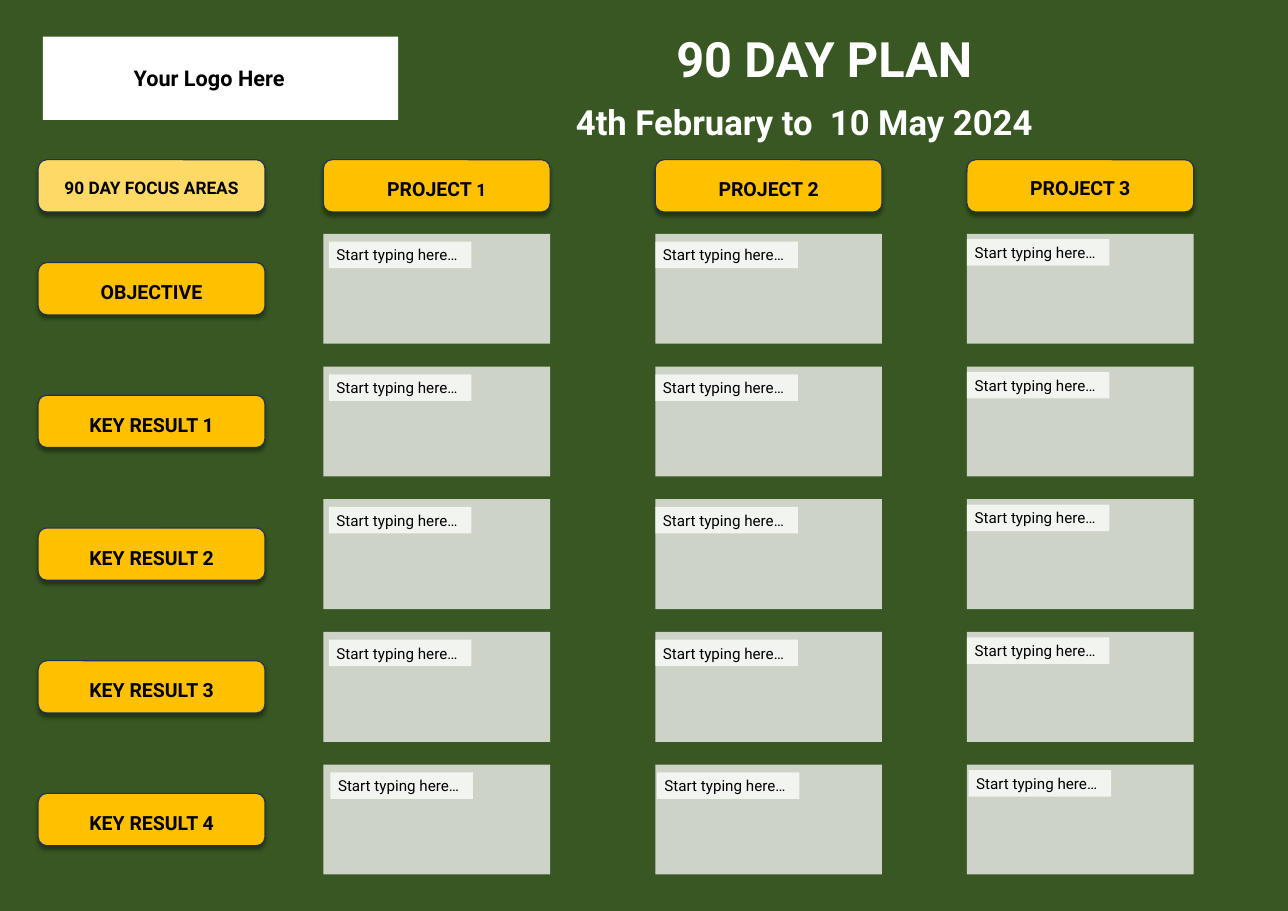
from lxml import etree
from pptx import Presentation
from pptx.dml.color import RGBColor
from pptx.enum.shapes import MSO_SHAPE as Preset
from pptx.enum.text import MSO_ANCHOR as Anchor, MSO_AUTO_SIZE as AutoSize, PP_ALIGN as Align
from pptx.oxml.ns import qn
from pptx.util import Inches, Pt

TITLE = "90 DAY PLAN"
DATES = "4th February to  10 May 2024"
LOGO_NOTE = "Your Logo Here"
PROMPT = "Start typing here…"
# Labels are lists of (text, size) runs
FOCUS = [("90 DAY FOCUS AREAS", 16)]
ROWS = ["OBJECTIVE", "KEY RESULT 1", "KEY RESULT 2", "KEY RESULT 3", "KEY RESULT 4"]
# Left edge, label runs, text drop, prompt offset within the cell
PROJECTS = [
    (4.15, [("PROJECT", 18), (" 1", 16)], 0.04, (0.07, 0.10)),
    (8.41, [("PROJECT 2", 18)], 0.04, (0, 0.10)),
    (12.41, [("PROJECT 3", 18)], 0.02, (0, 0.07)),
]

COLORS = {"green": "385723", "white": "FFFFFF", "black": "000000",
          "gold": "FFC000", "pale_gold": "FFD966", "navy": "1E3256"}
FONT = "Roboto"
LABEL_LEFT, HEADER_TOP = 0.49, 2.05
BUTTON_SIZE, CELL_SIZE, PROMPT_SIZE = (2.91, 0.67), (2.91, 1.41), (1.83, 0.34)
CELL_TOP, ROW_PITCH, BUTTON_DROP = 3, 1.703, 0.37
LAST_ROW_INDENT = 0.02


def color(name):
    return RGBColor.from_string(COLORS[name])


def write(shape, text, size=18, bold=True, ink="black", align=Align.CENTER,
          anchor=Anchor.MIDDLE, wrap=True):
    """Append one formatted run to the shape's first paragraph."""
    frame = shape.text_frame
    frame.auto_size = AutoSize.NONE
    frame.word_wrap = wrap
    frame.vertical_anchor = anchor
    paragraph = frame.paragraphs[0]
    paragraph.alignment = align
    run = paragraph.add_run()
    run.text = text
    run.font.name, run.font.size, run.font.bold = FONT, Pt(size), bold
    run.font.color.rgb = color(ink)


def place(shape, left, top, width, height):
    shape.left, shape.top = Inches(left), Inches(top)
    shape.width, shape.height = Inches(width), Inches(height)


def add_block(slide, left, top, size, fill="white", opacity=100, preset=Preset.RECTANGLE):
    shape = slide.shapes.add_shape(preset, *map(Inches, (left, top, *size)))
    shape.shadow.inherit = False
    shape.line.fill.background()
    shape.fill.solid()
    shape.fill.fore_color.rgb = color(fill)
    if opacity < 100:
        fill_color = shape.fill._xPr.find(".//" + qn("a:srgbClr"))
        etree.SubElement(fill_color, qn("a:alpha"), val=str(opacity * 1000))
    return shape


def add_button(slide, left, top, label, fill="gold", drop=0.04):
    """Rounded button with a soft shadow, its label lowered by drop inches."""
    button = add_block(slide, left, top, BUTTON_SIZE, fill, preset=Preset.ROUNDED_RECTANGLE)
    button.line.color.rgb = color("navy")
    button.line.width = Pt(1)
    effects = button._element.spPr.find(qn("a:effectLst"))
    shadow = etree.SubElement(effects, qn("a:outerShdw"), blurRad=str(Pt(4)), dist=str(Pt(3)),
                              dir="5400000", algn="t", rotWithShape="0")
    shade = etree.SubElement(shadow, qn("a:srgbClr"), val=COLORS["black"])
    etree.SubElement(shade, qn("a:alpha"), val="40000")
    button.text_frame.margin_top = Inches(0.05 + 2 * drop)
    for text, size in label:
        write(button, text, size=size)


def add_heading(slide):
    title, dates = slide.placeholders
    place(title, 8.24, 0.32, 4.68, 0.86)
    write(title, TITLE, size=45, ink="white", anchor=Anchor.TOP)
    place(dates, 6.39, 1.25, 7.87, 0.64)
    write(dates, DATES, size=32, ink="white", anchor=Anchor.TOP)
    dates.text_frame.paragraphs[0].space_before = Pt(0)
    logo = add_block(slide, 0.55, 0.47, (4.56, 1.07))
    logo.text_frame.margin_right = Inches(0.39)
    write(logo, LOGO_NOTE, size=20)


def add_grid(slide):
    add_button(slide, LABEL_LEFT, HEADER_TOP, FOCUS, fill="pale_gold", drop=0.02)
    for left, label, drop, _ in PROJECTS:
        add_button(slide, left, HEADER_TOP, label, drop=drop)
    for row, name in enumerate(ROWS):
        top = CELL_TOP + row * ROW_PITCH
        indent = LAST_ROW_INDENT if row == len(ROWS) - 1 else 0
        add_button(slide, LABEL_LEFT, top + BUTTON_DROP, [(name, 18)])
        for left, _, _, (right, down) in PROJECTS:
            add_block(slide, left, top, CELL_SIZE, opacity=75)
            prompt = add_block(slide, left + right + indent, top + down, PROMPT_SIZE, opacity=75)
            write(prompt, PROMPT, size=14, bold=False, align=Align.LEFT, wrap=False)


def main():
    presentation = Presentation()
    presentation.slide_width, presentation.slide_height = Inches(16.53), Inches(11.69)
    slide = presentation.slides.add_slide(presentation.slide_layouts[0])
    slide.background.fill.solid()
    slide.background.fill.fore_color.rgb = color("green")
    add_heading(slide)
    add_grid(slide)
    presentation.save("out.pptx")


if __name__ == "__main__":
    main()
